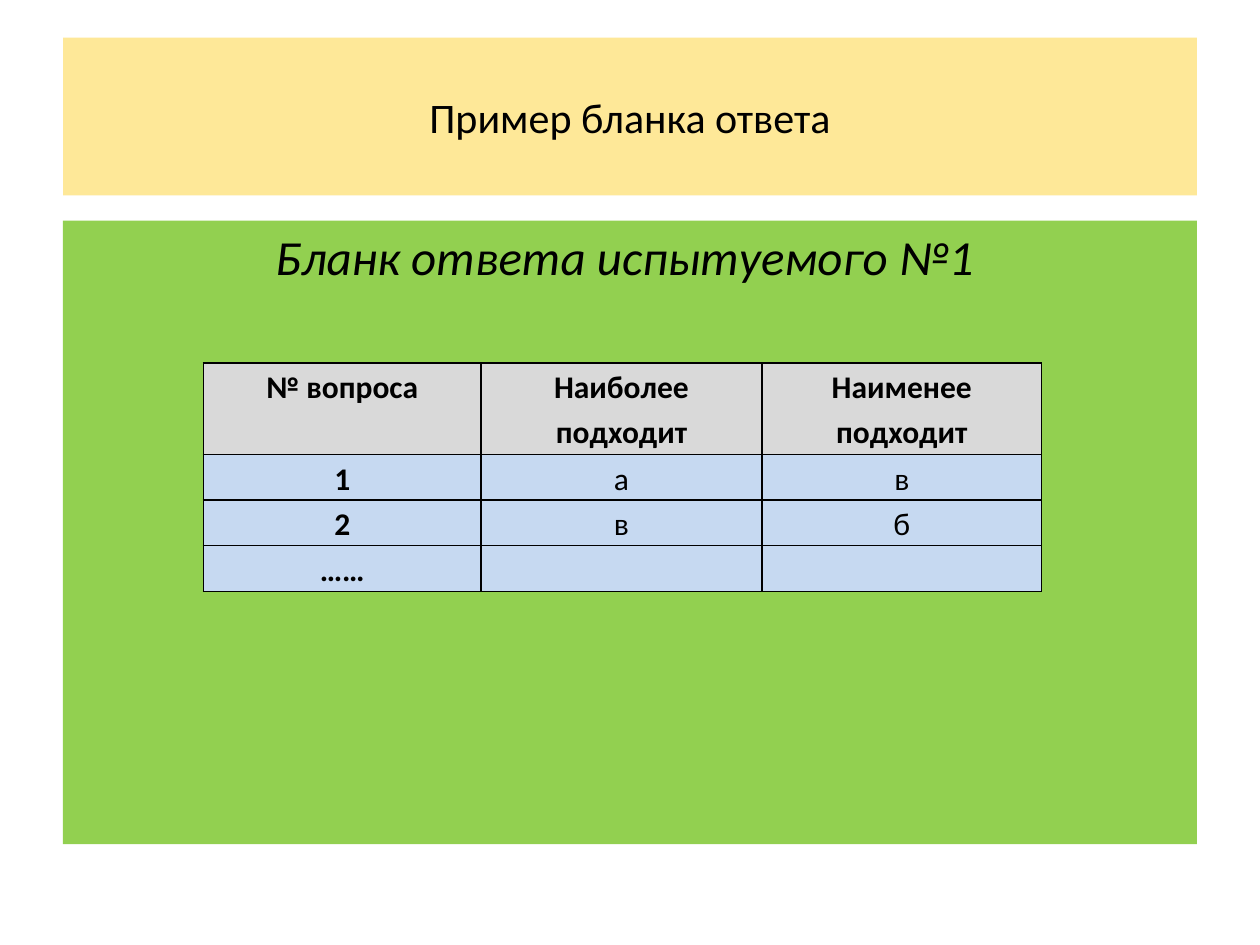
from lxml import etree
from pptx import Presentation
from pptx.dml.color import RGBColor
from pptx.enum import shapes, text
from pptx.oxml import ns
from pptx.util import Cm, Pt

# Content
TITLE = "Пример бланка ответа"
HEADING = "Бланк ответа испытуемого №1 "
ROWS = [
    ("№ вопроса", "Наиболее подходит", "Наименее подходит"),
    ("1", "а", "в"),
    ("2", "в", "б"),
    ("……", "", ""),
]

# Format
FONT = "Calibri"
BLACK = RGBColor(0x00, 0x00, 0x00)
CREAM = RGBColor(0xFE, 0xE8, 0x98)
GREEN = RGBColor(0x92, 0xD0, 0x50)
GREY = RGBColor(0xD9, 0xD9, 0xD9)
BLUE = RGBColor(0xC6, 0xD9, 0xF1)
COL_WIDTHS = [5.6, 5.66, 5.64]
ROW_HEIGHTS = [1.84, 0.92, 0.92, 0.92]
LEFT, WIDTH = 1.27, 22.86


def place(shape, top, height, fill):
    shape.left, shape.top = Cm(LEFT), Cm(top)
    shape.width, shape.height = Cm(WIDTH), Cm(height)
    shape.fill.solid()
    shape.fill.fore_color.rgb = fill


def write(tf, words, size, bold=False, italic=False):
    p = tf.paragraphs[0]
    p.alignment = text.PP_ALIGN.CENTER
    if words:
        r = p.add_run()
        r.text = words
        r.font.color.rgb = BLACK
        style = {"name": FONT, "size": Pt(size), "bold": bold, "italic": italic}
        for name, value in style.items():
            setattr(r.font, name, value)
    return p


def add_borders(cell):
    props = cell._tc.get_or_add_tcPr()
    for i, side in enumerate(("a:lnL", "a:lnR", "a:lnT", "a:lnB")):
        line = etree.Element(ns.qn(side), w=str(Pt(1)))
        fill = etree.SubElement(line, ns.qn("a:solidFill"))
        etree.SubElement(fill, ns.qn("a:srgbClr"), val=str(BLACK))
        props.insert(i, line)


prs = Presentation()
prs.slide_width, prs.slide_height = Cm(25.4), Cm(19.05)
s = prs.slides.add_slide(prs.slide_layouts[5])

# Title band
title = s.shapes.title
place(title, 0.76, 3.18, CREAM)
title.text_frame.vertical_anchor = text.MSO_ANCHOR.MIDDLE
write(title.text_frame, TITLE, 24)

# Green panel with the form heading
panel = s.shapes.add_shape(shapes.MSO_SHAPE.RECTANGLE, 0, 0, 0, 0)
place(panel, 4.45, 12.57, GREEN)
panel.line.fill.background()
panel.shadow.inherit = False
panel.text_frame.vertical_anchor = text.MSO_ANCHOR.TOP
write(panel.text_frame, HEADING, 28, italic=True).space_before = Pt(5.6)

# Answer table: bold header row and first column
table = s.shapes.add_table(
    len(ROWS), len(COL_WIDTHS), Cm(4.1), Cm(7.32),
    Cm(sum(COL_WIDTHS)), Cm(sum(ROW_HEIGHTS))).table
for column, width in zip(table.columns, COL_WIDTHS):
    column.width = Cm(width)
for row, height in zip(table.rows, ROW_HEIGHTS):
    row.height = Cm(height)
margins = {"margin_left": Cm(0.18), "margin_right": Cm(0.18),
           "margin_top": 0, "margin_bottom": 0}
for i, row in enumerate(ROWS):
    for j, words in enumerate(row):
        cell = table.cell(i, j)
        for name, value in margins.items():
            setattr(cell, name, value)
        cell.fill.solid()
        cell.fill.fore_color.rgb = GREY if i == 0 else BLUE
        p = write(cell.text_frame, words, 18, bold=i == 0 or j == 0)
        p.line_spacing = 1.15
        add_borders(cell)

prs.save("out.pptx")
